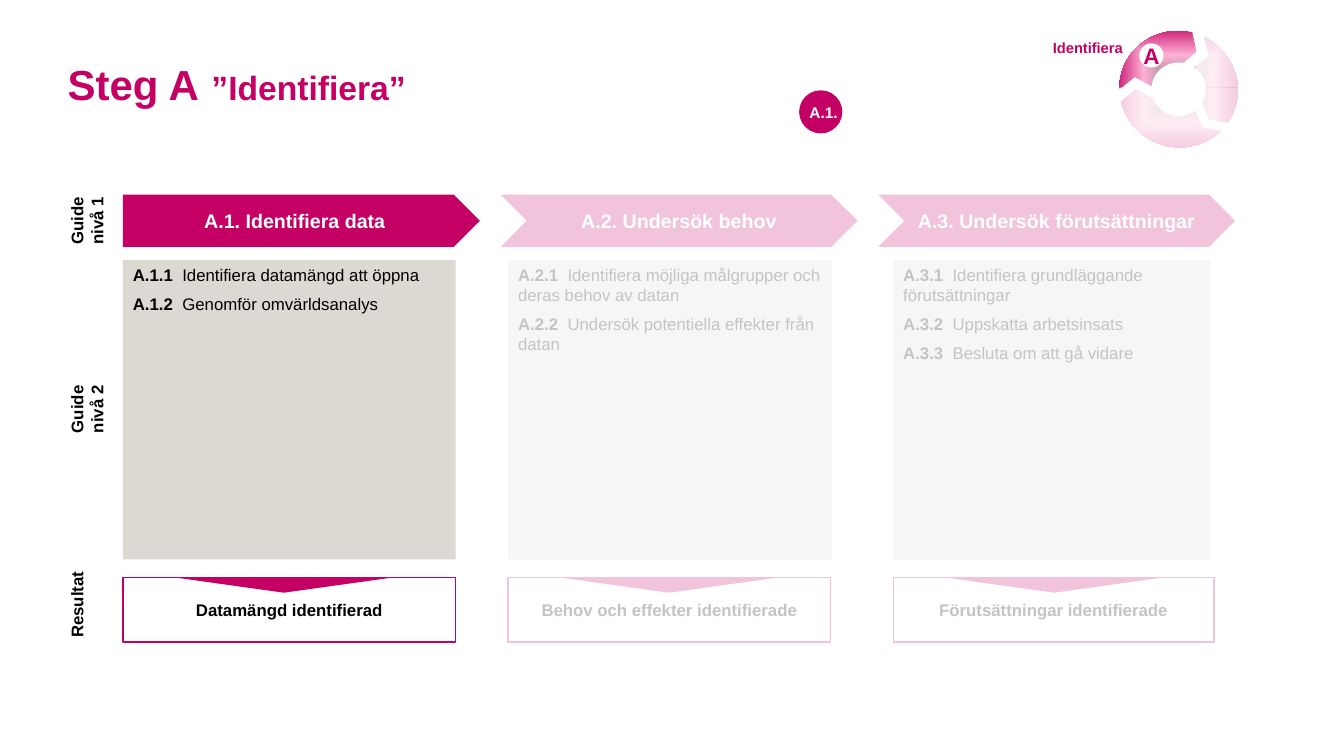
from dataclasses import dataclass

from pptx import Presentation, oxml, util as u
from pptx.dml.color import RGBColor
from pptx.enum import shapes, text
from pptx.oxml import ns


@dataclass(frozen=True)
class Theme:
    font: str = "Arial"
    magenta: str = "C40064"
    sand: str = "DCD9D2"
    black: str = "000000"
    white: str = "FFFFFF"
    ring: tuple = ((1, "808080"), (45, "FDB0D4"), (85, "C50366"))
    veil_opacity: int = 77
    title: float = 30
    title_gap: float = 32
    subtitle: float = 24
    letter: float = 16
    heading: float = 14
    body: float = 12
    badge: float = 11
    caption: float = 10.5


THEME = Theme()
KIND = shapes.MSO_SHAPE
CENTER = text.PP_ALIGN.CENTER
MIDDLE = text.MSO_ANCHOR.MIDDLE
TAB_STOP = u.Inches(0.49)

STEPS = [
    ("A.1. Identifiera data",
     [("A.1.1", "Identifiera datamängd att öppna"),
      ("A.1.2", "Genomför omvärldsanalys")],
     "Datamängd identifierad", 3.3, 3.3),
    ("A.2. Undersök behov",
     [("A.2.1", "Identifiera möjliga målgrupper och deras behov av datan"),
      ("A.2.2", "Undersök potentiella effekter från datan")],
     "Behov och effekter identifierade", 3.21, 3.2),
    ("A.3. Undersök förutsättningar",
     [("A.3.1", "Identifiera grundläggande förutsättningar"),
      ("A.3.2", "Uppskatta arbetsinsats"),
      ("A.3.3", "Besluta om att gå vidare")],
     "Förutsättningar identifierade", 3.14, 3.18),
]


def style(run, size, color, bold=True):
    run.font.name = THEME.font
    run.font.size = u.Pt(size)
    run.font.bold = bold
    run.font.color.rgb = RGBColor.from_string(color)


def write(shape, wording, size, color, align=CENTER, anchor=MIDDLE, inset=None):
    frame = shape.text_frame
    frame.word_wrap = True
    frame.vertical_anchor = anchor
    if inset is not None:
        frame.margin_left = frame.margin_right = u.Inches(inset)
        frame.margin_top = frame.margin_bottom = u.Inches(inset)
    frame.text = wording
    for paragraph in frame.paragraphs:
        paragraph.alignment = align
        for run in paragraph.runs:
            style(run, size, color)


def add_block(slide, kind, box, fill=None, line=None, line_width=1, rotation=0):
    block = slide.shapes.add_shape(kind, *map(u.Inches, box))
    block.shadow.inherit = False
    block.rotation = rotation
    if fill:
        block.fill.solid()
        block.fill.fore_color.rgb = RGBColor.from_string(fill)
    else:
        block.fill.background()
    if line:
        block.line.color.rgb = RGBColor.from_string(line)
        block.line.width = u.Pt(line_width)
    else:
        block.line.fill.background()
    return block


def add_label(slide, box, wording, size, color, rotation=0, **layout):
    label = slide.shapes.add_textbox(*map(u.Inches, box))
    label.rotation = rotation
    write(label, wording, size, color, **layout)


def add_veil(slide, box, rotation=0):
    veil = add_block(slide, KIND.RECTANGLE, box, THEME.white, rotation=rotation)
    color = veil._element.spPr.find(ns.qn("a:solidFill")).find(ns.qn("a:srgbClr"))
    color.append(oxml.parse_xml(
        f'<a:alpha {ns.nsdecls("a")} val="{THEME.veil_opacity * 1000}"/>'))


def add_title(slide, box):
    title = slide.shapes.title
    title.left, title.top, title.width, title.height = map(u.Inches, box)
    frame = title.text_frame
    write(title, "Steg A", THEME.title, THEME.magenta,
          text.PP_ALIGN.LEFT, text.MSO_ANCHOR.TOP, 0)
    frame.auto_size = text.MSO_AUTO_SIZE.NONE
    frame.margin_top = u.Inches(0.05)
    for wording, size in ((" ", THEME.title_gap), ("”Identifiera”", THEME.subtitle)):
        run = frame.paragraphs[0].add_run()
        run.text = wording
        style(run, size, THEME.magenta)


def add_tasks(slide, box, tasks):
    panel = add_block(slide, KIND.RECTANGLE, box, THEME.sand)
    frame = panel.text_frame
    frame.word_wrap = True
    frame.vertical_anchor = text.MSO_ANCHOR.TOP
    for index, (number, task) in enumerate(tasks):
        paragraph = frame.add_paragraph() if index else frame.paragraphs[0]
        paragraph.text = number + "\t"
        paragraph.alignment = text.PP_ALIGN.LEFT
        paragraph._p.get_or_add_pPr().append(oxml.parse_xml(
            f'<a:tabLst {ns.nsdecls("a")}><a:tab pos="{TAB_STOP}" algn="l"/></a:tabLst>'))
        if index:
            paragraph.space_before = u.Pt(6)
        style(paragraph.runs[0], THEME.body, THEME.black)
        description = paragraph.add_run()
        description.text = task
        style(description, THEME.body, THEME.black, bold=False)


def add_result(slide, box, wording):
    left, top, width, height = box
    result = add_block(slide, KIND.RECTANGLE, box, line=THEME.magenta)
    write(result, wording, THEME.body, THEME.black)
    add_block(slide, KIND.ISOSCELES_TRIANGLE, (left + 0.52, top, 2.15, 0.15),
              THEME.magenta, rotation=180)


def add_steps(slide, box):
    left, top, width, height = box
    for index, (heading, tasks, result, panel_width, result_width) in enumerate(STEPS):
        column = left + 3.82 * index
        add_tasks(slide, (column, top + 0.65, panel_width, 2.97), tasks)
        arrow = add_block(slide, KIND.CHEVRON if index else KIND.PENTAGON,
                          (left + 3.745 * index, top, 3.54, 0.52), THEME.magenta)
        write(arrow, heading, THEME.heading, THEME.white)
        add_result(slide, (column, top + height - 0.64, result_width, 0.64), result)
    add_veil(slide, (left + 3.67, top - 0.21, 7.57, 4.79))


def add_wheel(slide, box):
    left, top, width, height = box
    add_veil(slide, (left - 0.06, top - 0.25, 0.7, 0.96), 90)
    ring = add_block(slide, KIND.OVAL, box, THEME.magenta, rotation=22.7)
    stops = "".join(f'<a:gs pos="{place * 1000}"><a:srgbClr val="{color}"/></a:gs>'
                    for place, color in THEME.ring)
    gradient = oxml.parse_xml(
        f'<a:gradFill {ns.nsdecls("a")} rotWithShape="1"><a:gsLst>{stops}</a:gsLst>'
        '<a:path path="shape"><a:fillToRect l="50000" t="50000" r="50000" b="50000"/>'
        '</a:path></a:gradFill>')
    properties = ring._element.spPr
    properties.replace(properties.find(ns.qn("a:solidFill")), gradient)
    add_block(slide, KIND.OVAL, (left + 0.32, top + 0.31, 0.54, 0.53), THEME.white)
    for x, y, gap_width, gap_height, rotation in (
            (0.05, 0.4, 0.23, 0.34, 264.7),
            (0.65, 0.01, 0.24, 0.39, 18.7),
            (0.79, 0.69, 0.2, 0.37, 128.4)):
        add_block(slide, KIND.CHEVRON, (left + x, top + y, gap_width, gap_height),
                  THEME.white, rotation=rotation)
    letter = add_block(slide, KIND.OVAL, (left + 0.2, top + 0.12, 0.24, 0.24), THEME.white)
    write(letter, "A", THEME.letter, THEME.magenta, inset=0)
    letter.text_frame.word_wrap = False
    add_label(slide, (left - 0.93, top - 0.12, 1.24, 0.56), "Identifiera",
              THEME.caption, THEME.magenta)
    add_veil(slide, (left - 0.18, top + 0.56, 1.54, 0.65))
    add_veil(slide, (left + 0.82, top - 0.01, 0.51, 0.63), 90)


def add_badge(slide, box):
    left, top, width, height = box
    add_block(slide, KIND.OVAL, box, THEME.magenta, THEME.magenta, 2)
    add_label(slide, (left - 0.01, top + 0.06, 0.6, 0.29), "A.1.", THEME.badge,
              THEME.white, align=text.PP_ALIGN.LEFT, anchor=text.MSO_ANCHOR.TOP)


def add_row_labels(slide, box):
    left, top, width, height = box
    middle = left + width / 2
    for wording, offset, length in (("Guide nivå 1", 0.26, 0.81),
                                    ("Guide\nnivå 2", 2.13, 2.97),
                                    ("Resultat", 4.07, 1.01)):
        add_label(slide, (middle - length / 2, top + offset - width / 2, length, width),
                  wording, THEME.body, THEME.black, rotation=270,
                  anchor=text.MSO_ANCHOR.TOP, inset=0)


def main():
    deck = Presentation()
    deck.slide_width, deck.slide_height = u.Inches(13.33), u.Inches(7.5)
    slide = deck.slides.add_slide(deck.slide_layouts[5])
    add_title(slide, (0.67, 0.5, 10.42, 0.91))
    add_steps(slide, (1.22, 1.93, 11.03, 4.44))
    add_wheel(slide, (11.1, 0.31, 1.18, 1.15))
    add_badge(slide, (7.94, 0.91, 0.4, 0.4))
    add_row_labels(slide, (0.66, 1.93, 0.44, 4.44))
    deck.save("out.pptx")


if __name__ == "__main__":
    main()
